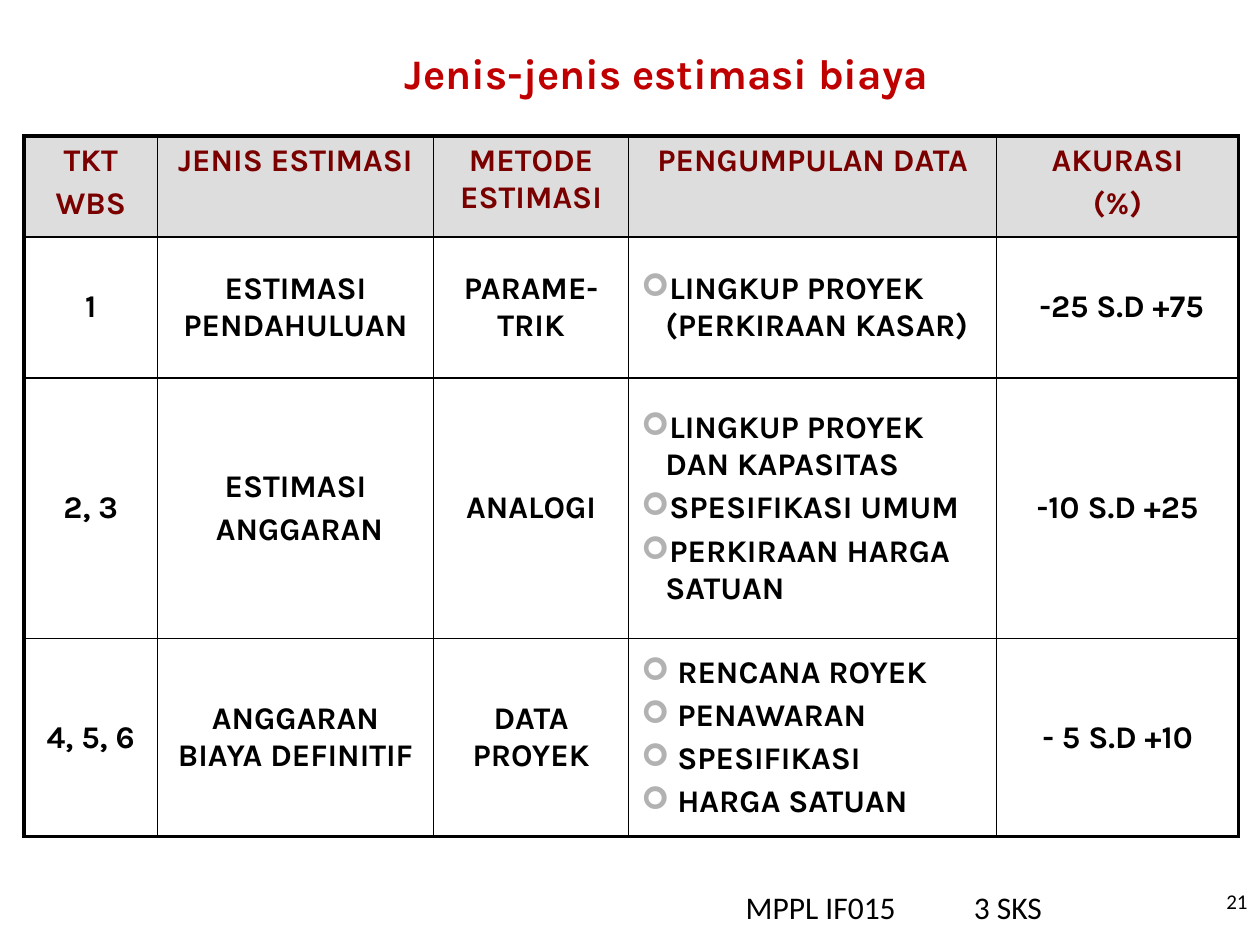
from dataclasses import dataclass

from lxml.etree import SubElement as Sub
from pptx import Presentation
from pptx.dml.color import RGBColor as Rgb
from pptx.enum.text import MSO_ANCHOR as Anchor, MSO_AUTO_SIZE as Fit, PP_ALIGN as Align
from pptx.oxml.ns import qn
from pptx.util import Inches, Pt


@dataclass(frozen=True)
class Theme:
    head: str = "Karla"
    body: str = "Calibri"
    title: int = 24
    text: int = 18
    small: int = 12
    red: str = "C00000"
    maroon: str = "7A0000"
    black: str = "000000"
    grey: str = "DDDDDD"
    mark: str = "B2B2B2"
    thin: float = 1
    thick: float = 2.25


class Deck:
    def __init__(self, theme):
        self.theme = theme
        self.prs = Presentation()
        self.prs.slide_width, self.prs.slide_height = Inches(10), Inches(7.5)
        self.slide = self.prs.slides.add_slide(self.prs.slide_layouts[5])

    def add_run(self, par, text, font, size, color, bold=False, align=Align.LEFT):
        par.alignment = align
        run = par.add_run()
        run.text = text
        run.font.name, run.font.size, run.font.bold = font, Pt(size), bold
        run.font.color.rgb = Rgb.from_string(color)

    def title(self, text, box):
        shape = self.slide.shapes.title
        shape.left, shape.top, shape.width, shape.height = map(Inches, box)
        frame = shape.text_frame
        frame.auto_size, frame.vertical_anchor = Fit.SHAPE_TO_FIT_TEXT, Anchor.TOP
        t = self.theme
        self.add_run(frame.paragraphs[0], text, t.head, t.title, t.red, True, Align.CENTER)

    def label(self, text, box, size, align=Align.LEFT, anchor=Anchor.TOP, tab=None):
        frame = self.slide.shapes.add_textbox(*map(Inches, box)).text_frame
        frame.word_wrap, frame.vertical_anchor = True, anchor
        par = frame.paragraphs[0]
        self.add_run(par, text, self.theme.body, size, self.theme.black, align=align)
        if tab:
            stops = Sub(par._p.get_or_add_pPr(), qn("a:tabLst"))
            Sub(stops, qn("a:tab"), pos=str(Inches(tab)), algn="l")

    def bullet(self, par, hang):
        props = par._p.get_or_add_pPr()
        props.set("marL", str(Inches(hang)))
        props.set("indent", str(-Inches(hang)))
        Sub(Sub(props, qn("a:buClr")), qn("a:srgbClr"), val=self.theme.mark)
        Sub(props, qn("a:buFont"), typeface="Wingdings")
        Sub(props, qn("a:buChar"), char="➢")

    def border(self, cell, widths):
        props = cell._tc.get_or_add_tcPr()
        for side, width in zip("LRTB", widths):
            line = Sub(props, qn(f"a:ln{side}"), w=str(Pt(width)))
            Sub(Sub(line, qn("a:solidFill")), qn("a:srgbClr"), val=self.theme.black)

    def fill(self, cell, lines, head, hang):
        t = self.theme
        cell.vertical_anchor = Anchor.TOP if head else Anchor.MIDDLE
        if head:
            cell.fill.solid()
            cell.fill.fore_color.rgb = Rgb.from_string(t.grey)
        else:
            cell.fill.background()
        frame = cell.text_frame
        for i, text in enumerate(lines):
            par = frame.add_paragraph() if i else frame.paragraphs[0]
            par.space_before = Pt(t.text * 0.2)
            align = Align.CENTER if hang is None else Align.LEFT
            self.add_run(par, text, t.head, t.text, t.maroon if head else t.black, True, align)
            if hang is not None:
                self.bullet(par, hang)

    def table(self, rows, left, top, widths, heights, list_col, hangs):
        size = len(rows), len(widths)
        box = map(Inches, (left, top, sum(widths), sum(heights)))
        grid = self.slide.shapes.add_table(*size, *box).table
        grid.first_row = grid.horz_banding = False
        for col, width in zip(grid.columns, widths):
            col.width = Inches(width)
        for row, height in zip(grid.rows, heights):
            row.height = Inches(height)
        t = self.theme
        for r, row in enumerate(rows):
            for c, lines in enumerate(row):
                cell = grid.cell(r, c)
                # Thick lines on the outer edge only
                edges = c == 0, c == size[1] - 1, r == 0, r == size[0] - 1
                self.border(cell, [t.thick if edge else t.thin for edge in edges])
                self.fill(cell, lines, r == 0, hangs[r] if c == list_col else None)


# One list of paragraphs per cell
ROWS = [
    [["TKT", "WBS"], ["JENIS ESTIMASI"], ["METODE ESTIMASI"],
     ["PENGUMPULAN DATA"], ["AKURASI", "(%)"]],
    [["1"], ["ESTIMASI PENDAHULUAN"], ["PARAME-TRIK"],
     ["LINGKUP PROYEK (PERKIRAAN KASAR)"], [" -25 S.D +75"]],
    [["2, 3"], ["ESTIMASI", " ANGGARAN"], ["ANALOGI"],
     ["LINGKUP PROYEK DAN KAPASITAS", "SPESIFIKASI UMUM", "PERKIRAAN HARGA SATUAN"],
     ["-10 S.D +25"]],
    [["4, 5, 6"], ["ANGGARAN BIAYA DEFINITIF"], ["DATA PROYEK"],
     [" RENCANA ROYEK", " PENAWARAN", " SPESIFIKASI", " HARGA SATUAN"],
     ["- 5 S.D +10"]],
]


def main():
    theme = Theme()
    deck = Deck(theme)
    # Cost estimate table
    deck.table(ROWS, 0.19, 1.08, [1.06, 2.19, 1.55, 2.92, 1.92],
               [0.8, 1.12, 2.07, 1.57], list_col=3, hangs=[None, 0.19, 0.19, 0])
    # Footer and page number
    deck.label("MPPL IF015\t3 SKS", (5.82, 7, 4.18, 0.32), theme.text, tab=1.81)
    deck.label("21", (7.67, 6.95, 2.33, 0.4), theme.small, Align.RIGHT, Anchor.MIDDLE)
    # Heading
    deck.title("Jenis-jenis estimasi biaya", (2.33, 0.33, 5.92, 0.5))
    deck.prs.save("out.pptx")


if __name__ == "__main__":
    main()
